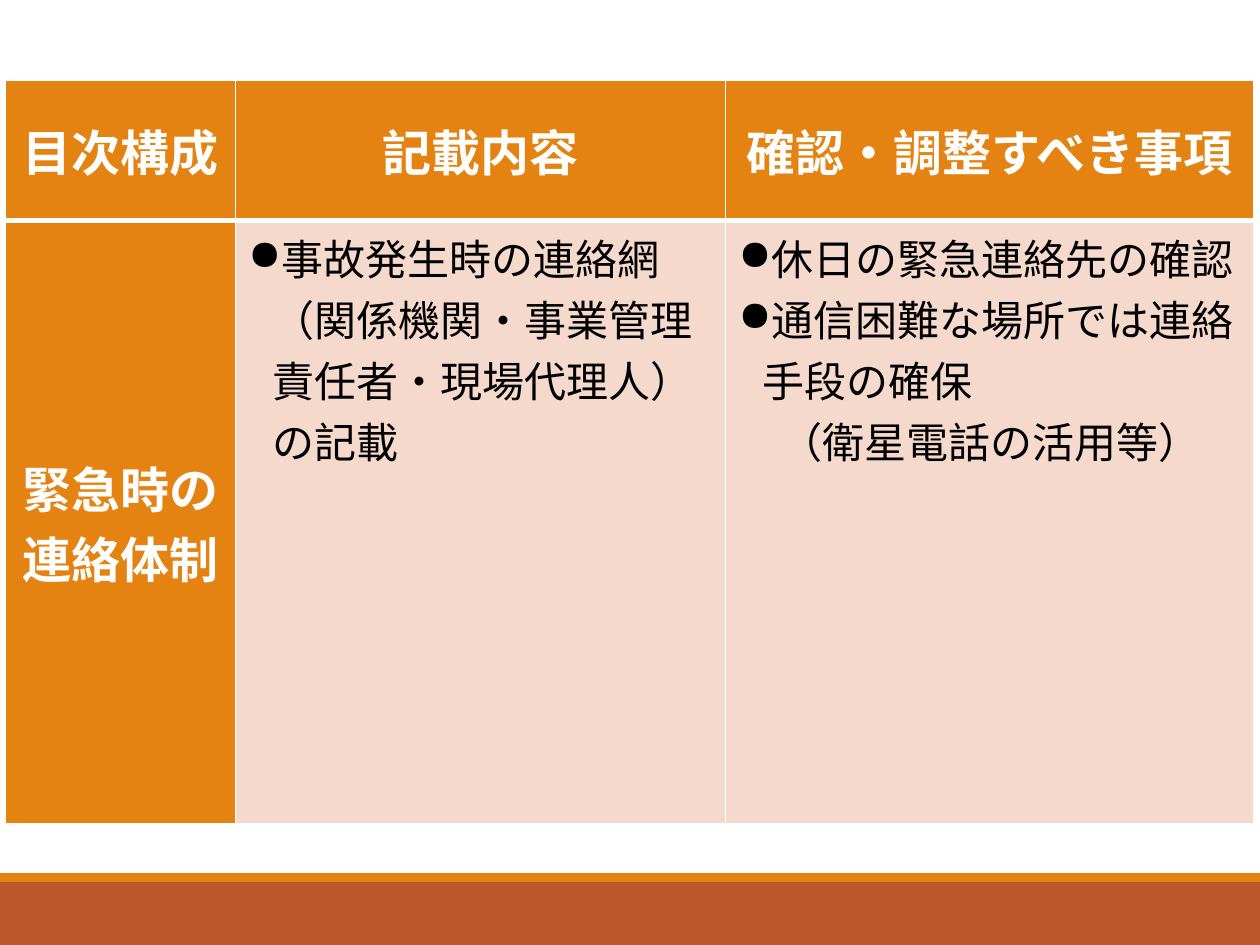
from lxml import etree
from pptx import Presentation
from pptx.dml.color import RGBColor
from pptx.enum.shapes import MSO_SHAPE
from pptx.enum.text import MSO_ANCHOR, PP_ALIGN
from pptx.oxml.ns import qn
from pptx.util import Inches, Pt

RECTANGLE = MSO_SHAPE.RECTANGLE
MIDDLE, TOP = MSO_ANCHOR.MIDDLE, MSO_ANCHOR.TOP
CENTER, LEFT = PP_ALIGN.CENTER, PP_ALIGN.LEFT

COLORS = {"orange": "E48312", "rust": "BD582C", "peach": "F5D9CC",
          "white": "FFFFFF", "black": "000000"}
FONT = "Calibri"
BULLET = "●"
HANGING = Inches(0.19)
COLUMNS = [1.83, 3.89, 4.19]
ROWS = [1.11, 4.79]

HEADINGS = ["目次構成", "記載内容", "確認・調整すべき事項"]
SECTION = "緊急時の連絡体制"
CONTENTS = ["●事故発生時の連絡網（関係機関・事業管理責任者・現場代理人）の記載"]
CHECKS = ["●休日の緊急連絡先の確認", "●通信困難な場所では連絡手段の確保", "　（衛星電話の活用等）"]


def write_cell(cell, lines, fill="orange", color="white", size=28, bold=True,
               align=CENTER, anchor=MIDDLE):
    """Fill a cell; a line that starts with the bullet sign becomes a list item."""
    cell.fill.solid()
    cell.fill.fore_color.rgb = RGBColor.from_string(COLORS[fill])
    cell.vertical_anchor = anchor
    frame = cell.text_frame
    for number, line in enumerate(lines):
        para = frame.add_paragraph() if number else frame.paragraphs[0]
        para.alignment = align
        if line.startswith(BULLET):
            props = para._p.get_or_add_pPr()
            props.set("marL", str(HANGING))
            props.set("indent", str(-HANGING))
            etree.SubElement(props, qn("a:buChar")).set("char", BULLET)
        span = para.add_run()
        span.text = line.removeprefix(BULLET)
        span.font.name, span.font.size, span.font.bold = FONT, Pt(size), bold
        span.font.color.rgb = RGBColor.from_string(COLORS[color])


def set_borders(cell, top, bottom):
    """Draw white borders, given the top and bottom widths in points."""
    props = cell._tc.get_or_add_tcPr()
    widths = {"a:lnL": 1, "a:lnR": 1, "a:lnT": top, "a:lnB": bottom}
    for place, (tag, width) in enumerate(widths.items()):
        line = etree.Element(qn(tag), w=str(Pt(width)))
        fill = etree.SubElement(line, qn("a:solidFill"))
        etree.SubElement(fill, qn("a:srgbClr")).set("val", COLORS["white"])
        props.insert(place, line)


deck = Presentation()
deck.slide_width, deck.slide_height = Inches(10), Inches(7.5)
page = deck.slides.add_slide(deck.slide_layouts[6])

# Footer bands
for top, height, color in [(7, 0.5, "rust"), (6.93, 0.07, "orange")]:
    band = page.shapes.add_shape(RECTANGLE, 0, Inches(top), deck.slide_width, Inches(height))
    band.shadow.inherit = False
    band.fill.solid()
    band.fill.fore_color.rgb = RGBColor.from_string(COLORS[color])
    band.line.fill.background()

# Table
table = page.shapes.add_table(len(ROWS), len(COLUMNS), Inches(0.04), Inches(0.64),
                              Inches(sum(COLUMNS)), Inches(sum(ROWS))).table
for column, width in zip(table.columns, COLUMNS):
    column.width = Inches(width)
for row, height in zip(table.rows, ROWS):
    row.height = Inches(height)

for column, heading in enumerate(HEADINGS):
    write_cell(table.cell(0, column), [heading])
    set_borders(table.cell(0, column), top=1, bottom=3)
    set_borders(table.cell(1, column), top=3, bottom=1)

write_cell(table.cell(1, 0), [SECTION])
for column, lines in enumerate([CONTENTS, CHECKS], start=1):
    write_cell(table.cell(1, column), lines, fill="peach", color="black", size=24,
               bold=False, align=LEFT, anchor=TOP)

deck.save("out.pptx")
